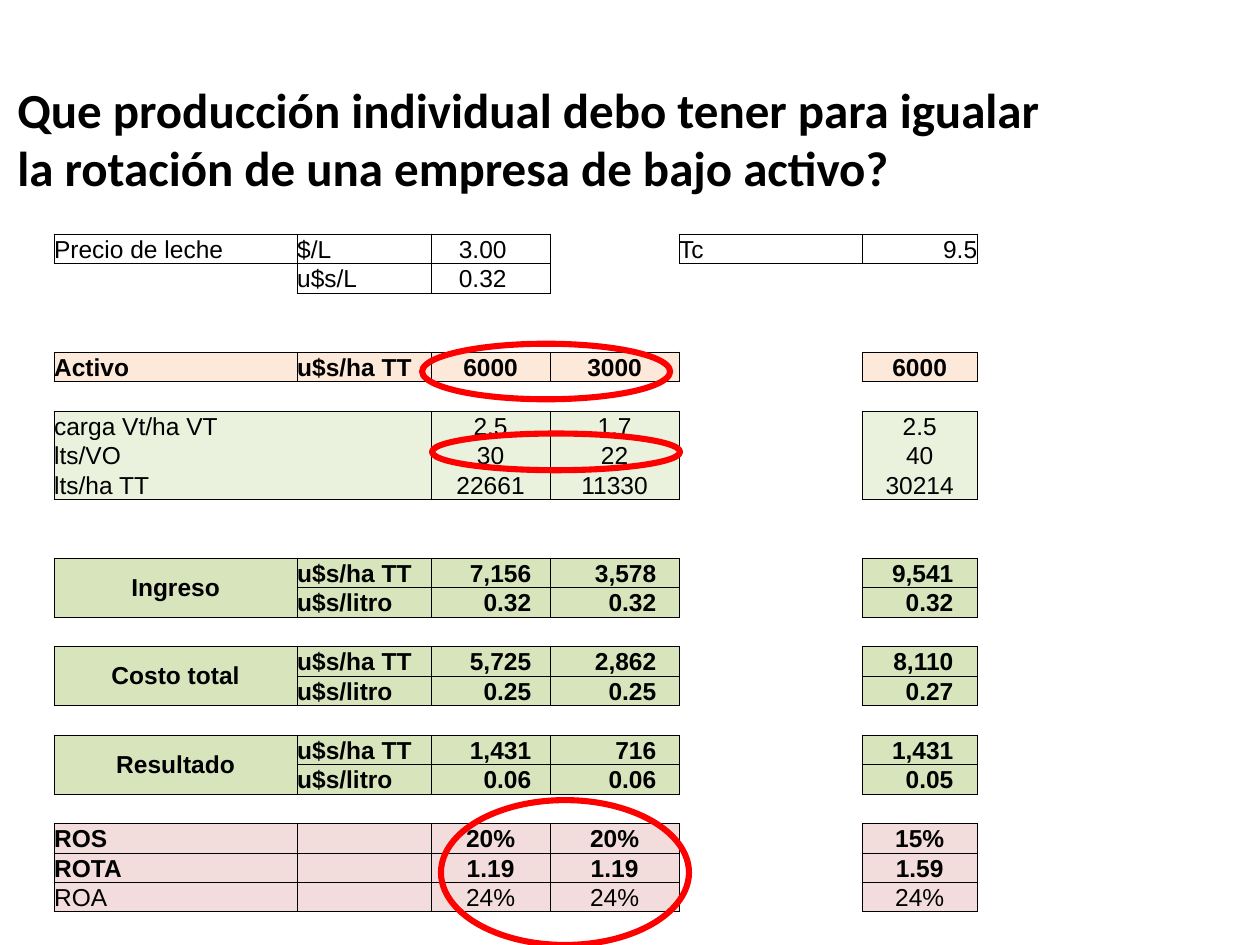
from lxml import etree
from pptx import Presentation
from pptx.dml.color import RGBColor
from pptx.enum.shapes import MSO_SHAPE
from pptx.enum.text import MSO_ANCHOR, PP_ALIGN
from pptx.oxml import parse_xml
from pptx.oxml.ns import nsdecls, qn
from pptx.util import Cm, Pt

LEFT, CENTER, RIGHT = PP_ALIGN.LEFT, PP_ALIGN.CENTER, PP_ALIGN.RIGHT
MIDDLE, BOTTOM = MSO_ANCHOR.MIDDLE, MSO_ANCHOR.BOTTOM
ELLIPSE = MSO_SHAPE.OVAL

COLORS = {
    "text": "000000", "border": "000000", "mark": "FF0000",
    "asset": "FDE9D9", "stock": "EAF1DD", "money": "D7E4BC", "ratio": "F2DDDC",
}
COL_WIDTHS = [4.9, 2.7, 2.4, 2.6, 3.69, 2.32]
ROW_COUNT, ROW_HEIGHT = 23, 0.59
VALUE_COLS = (2, 3, 5)
NUMBER_PAD = {2: 0.38, 3: 0.46, 5: 0.48}  # right margin of money columns

# First row, colour, bold, rows of label and three values
PLAIN_GROUPS = [
    (4, "asset", True, [("Activo", "u$s/ha TT", "6000", "3000", "6000")]),
    (6, "stock", False, [("carga Vt/ha VT", "", "2.5", "1.7", "2.5"),
                         ("lts/VO", "", "30", "22", "40"),
                         ("lts/ha TT", "", "22661", "11330", "30214")]),
    (20, "ratio", True, [("ROS", "", "20%", "20%", "15%"),
                         ("ROTA", "", "1.19", "1.19", "1.59")]),
    (22, "ratio", False, [("ROA", "", "24%", "24%", "24%")]),
]
# First row, title, values per hectare, values per litre
MONEY_GROUPS = [
    (11, "Ingreso", ("7,156", "3,578", "9,541"), ("0.32", "0.32", "0.32")),
    (14, "Costo total", ("5,725", "2,862", "8,110"), ("0.25", "0.25", "0.27")),
    (17, "Resultado", ("1,431", "716", "1,431"), ("0.06", "0.06", "0.05")),
]


class Deck:
    """Holds the style and the current slide."""

    def __init__(self, slide):
        self.s = slide
        self.table = None
        self.lines = set()  # grid segments: (direction, row, column)

    def color(self, name):
        return RGBColor.from_string(COLORS[name])

    def style(self, p, font, size, bold):
        for r in p.runs:
            r.font.name, r.font.size, r.font.bold = font, Pt(size), bold
            r.font.color.rgb = self.color("text")

    def title(self, text, x, y, w, h):
        tf = self.s.shapes.add_textbox(Cm(x), Cm(y), Cm(w), Cm(h)).text_frame
        tf.word_wrap = True
        tf.text = text
        self.style(tf.paragraphs[0], "Calibri", 28, True)

    def ellipse(self, x, y, w, h):
        sp = self.s.shapes.add_shape(ELLIPSE, Cm(x), Cm(y), Cm(w), Cm(h))
        sp.shadow.inherit = False
        sp.fill.background()
        sp.line.color.rgb = self.color("mark")
        sp.line.width = Pt(3.5)

    def grid(self, x, y):
        frame = self.s.shapes.add_table(ROW_COUNT, len(COL_WIDTHS), Cm(x), Cm(y),
                                        Cm(sum(COL_WIDTHS)), Cm(ROW_COUNT * ROW_HEIGHT))
        self.table = frame.table
        self.table.first_row = self.table.horz_banding = False
        for col, width in zip(self.table.columns, COL_WIDTHS):
            col.width = Cm(width)
        for row in self.table.rows:
            row.height = Cm(ROW_HEIGHT)
        for cell in self.table.iter_cells():
            cell.margin_left = cell.margin_right = 0
            cell.margin_top = cell.margin_bottom = 0
            cell.vertical_anchor = BOTTOM
            cell.fill.background()
            # Keeps empty cells as low as the filled ones
            end = etree.SubElement(cell.text_frame.paragraphs[0]._p, qn("a:endParaRPr"))
            end.set("sz", "1400")

    def cell(self, row, col, text, fill=None, bold=False, align=LEFT, left=0, right=0):
        cell = self.table.cell(row, col)
        if fill:
            cell.fill.solid()
            cell.fill.fore_color.rgb = self.color(fill)
        if text:
            cell.margin_left, cell.margin_right = Cm(left), Cm(right)
            p = cell.text_frame.paragraphs[0]
            p.text = text
            p.alignment = align
            self.style(p, "Arial", 14, bold)
        return cell

    def box(self, row, col, rows=1, cols=1):
        for c in range(col, col + cols):
            self.lines |= {("h", row, c), ("h", row + rows, c)}
        for r in range(row, row + rows):
            self.lines |= {("v", r, col), ("v", r, col + cols)}

    def borders(self):
        for r in range(ROW_COUNT):
            for c in range(len(COL_WIDTHS)):
                cell = self.table.cell(r, c)
                sides = {"lnL": ("v", r, c), "lnR": ("v", r, c + 1),
                         "lnT": ("h", r, c), "lnB": ("h", r + cell.span_height, c)}
                tc_pr = cell._tc.get_or_add_tcPr()
                for i, (tag, segment) in enumerate(sides.items()):
                    paint = "<a:noFill/>"
                    if segment in self.lines:
                        paint = ('<a:solidFill><a:srgbClr val="%s"/></a:solidFill>'
                                 % COLORS["border"])
                    tc_pr.insert(i, parse_xml('<a:%s %s w="%d">%s</a:%s>' % (
                        tag, nsdecls("a"), Pt(0.5), paint, tag)))


def price_rows(deck):
    cells = [(0, 0, "Precio de leche"), (0, 1, "$/L"), (1, 1, "u$s/L"), (0, 4, "Tc")]
    for row, col, text in cells:
        deck.cell(row, col, text)
        deck.box(row, col)
    for row, text in enumerate(("3.00", "0.32")):
        deck.cell(row, 2, text, left=0.56)
        deck.box(row, 2)
    deck.cell(0, 5, "9.5", align=RIGHT)
    deck.box(0, 5)


def plain_group(deck, first, fill, bold, rows):
    for r, (label, unit, *values) in enumerate(rows, first):
        deck.cell(r, 0, label, fill, bold)
        deck.cell(r, 1, unit, fill, bold)
        for c, value in zip(VALUE_COLS, values):
            deck.cell(r, c, value, fill, bold, CENTER)
    if fill == "stock":  # one frame per column, label across two
        deck.box(first, 0, len(rows), 2)
        for c in VALUE_COLS:
            deck.box(first, c, len(rows))
    else:
        for r in range(first, first + len(rows)):
            for c in (0, 1, *VALUE_COLS):
                deck.box(r, c)


def money_group(deck, first, title, per_ha, per_litre):
    deck.table.cell(first, 0).merge(deck.table.cell(first + 1, 0))
    deck.cell(first, 0, title, "money", True, CENTER).vertical_anchor = MIDDLE
    deck.box(first, 0, 2)
    units = (("u$s/ha TT", per_ha), ("u$s/litro", per_litre))
    for r, (unit, values) in enumerate(units, first):
        deck.cell(r, 1, unit, "money", True)
        deck.box(r, 1)
        for c, value in zip(VALUE_COLS, values):
            deck.cell(r, c, value, "money", True, RIGHT, right=NUMBER_PAD[c])
            deck.box(r, c)


def main():
    prs = Presentation()
    prs.slide_width, prs.slide_height = Cm(25.4), Cm(19.05)
    deck = Deck(prs.slides.add_slide(prs.slide_layouts[6]))

    # Title
    deck.title("Que producción individual debo tener para igualar "
               "la rotación de una empresa de bajo activo?", 0.1, 1.47, 22, 2.64)

    # Table
    deck.grid(1.09, 4.72)
    price_rows(deck)
    for group in PLAIN_GROUPS:
        plain_group(deck, *group)
    for group in MONEY_GROUPS:
        money_group(deck, *group)
    deck.borders()

    # Red marks around ratios, assets and litres per cow
    for x, y, h in ((8.89, 16.13, 2.92), (8.51, 6.93, 1.12), (8.71, 8.74, 0.74)):
        deck.ellipse(x, y, 5, h)

    prs.save("out.pptx")


if __name__ == "__main__":
    main()
